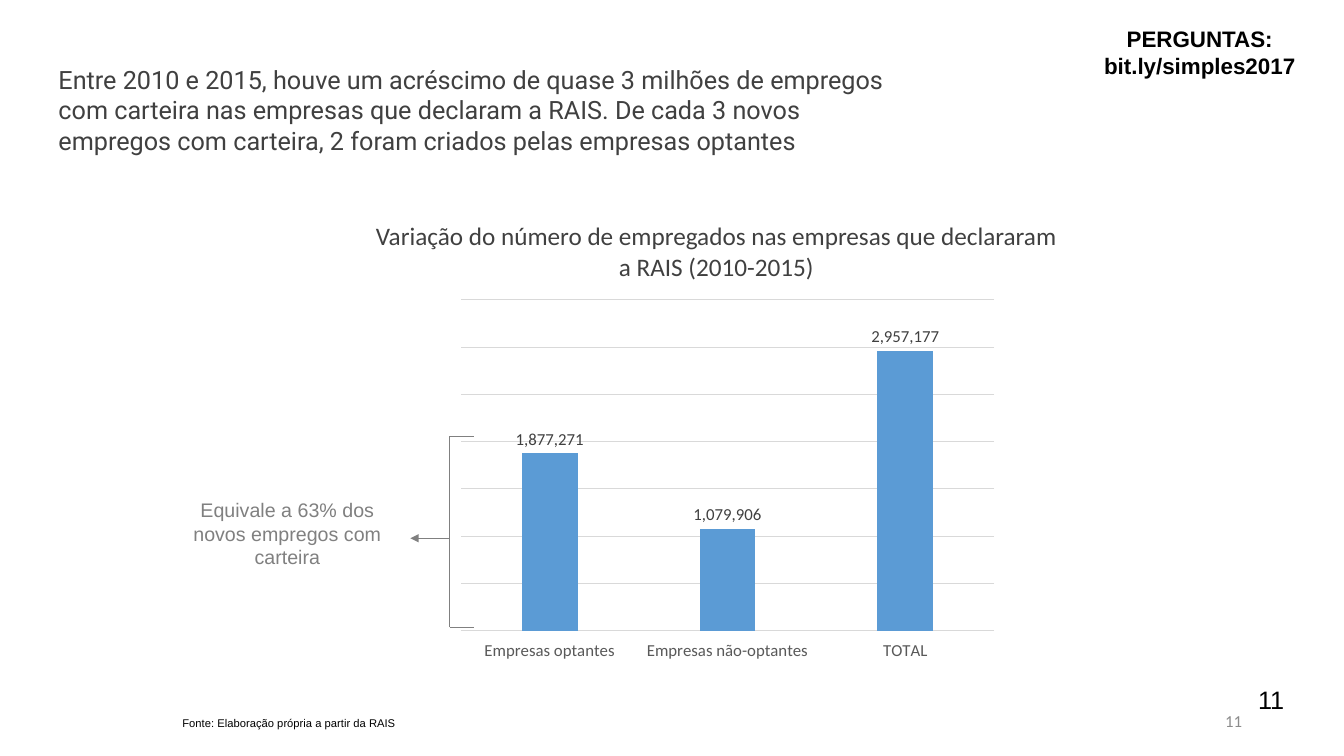
from dataclasses import dataclass

from lxml.etree import SubElement
from pptx import Presentation
from pptx.chart.data import CategoryChartData
from pptx.dml.color import RGBColor
from pptx.enum.chart import XL_CHART_TYPE as ChartType
from pptx.enum.chart import XL_LABEL_POSITION as LabelPosition
from pptx.enum.chart import XL_TICK_LABEL_POSITION as TickLabels
from pptx.enum.chart import XL_TICK_MARK as TickMark
from pptx.enum.shapes import MSO_CONNECTOR as Connector
from pptx.enum.shapes import MSO_SHAPE as Preset
from pptx.enum.text import MSO_ANCHOR as Anchor
from pptx.enum.text import MSO_AUTO_SIZE as AutoSize
from pptx.enum.text import PP_ALIGN as Align
from pptx.oxml.ns import qn
from pptx.util import Inches, Pt


@dataclass(frozen=True)
class Theme:
    black: str = "000000"
    dark: str = "404040"
    label: str = "595959"
    gray: str = "808080"
    pale: str = "8C8C8C"
    grid: str = "D9D9D9"
    bar: str = "5B9BD5"
    white: str = "FFFFFF"
    heading: int = 18
    banner: int = 16
    note: int = 14
    small: int = 12
    source: int = 8
    sans: str = "Arial"
    chart: str = "Calibri"
    title: str = "Roboto"


class SlideBuilder:
    """Draws styled elements on one slide, with lengths in percent of its size."""

    def __init__(self, deck, theme):
        self.deck, self.theme = deck, theme
        self.page = deck.slides.add_slide(deck.slide_layouts[5])

    def across(self, share):
        return int(self.deck.slide_width * share / 100)

    def down(self, share):
        return int(self.deck.slide_height * share / 100)

    def area(self, left, top, width, height):
        return self.across(left), self.down(top), self.across(width), self.down(height)

    def style(self, font, size, color, face, bold=False):
        font.size, font.name, font.bold = Pt(size), face, bold
        font.color.rgb = RGBColor.from_string(color)

    def fill_text(self, box, text, size, color, face, align=Align.LEFT, anchor=Anchor.TOP, bold=False):
        frame = box.text_frame
        frame.text = text
        frame.word_wrap = True
        frame.auto_size = AutoSize.NONE
        frame.vertical_anchor = anchor
        for para in frame.paragraphs:
            para.alignment = align
            for span in para.runs:
                self.style(span.font, size, color, face, bold)

    def title(self, area, text):
        box = self.page.shapes.title
        box.left, box.top, box.width, box.height = self.area(*area)
        self.fill_text(box, text, self.theme.heading, self.theme.dark, self.theme.title)

    def text(self, area, text, size, color, face, **layout):
        box = self.page.shapes.add_textbox(*self.area(*area))
        self.fill_text(box, text, size, color, face, **layout)

    def banner(self, area, text):
        box = self.page.shapes.add_shape(Preset.RECTANGLE, *self.area(*area))
        box.shadow.inherit = False
        box.fill.solid()
        box.fill.fore_color.rgb = RGBColor.from_string(self.theme.white)
        box.line.fill.background()
        self.fill_text(box, text, self.theme.banner, self.theme.black, self.theme.sans,
                       align=Align.CENTER, bold=True)

    def line(self, group, start, end, arrow=False):
        ends = [self.across(start[0]), self.down(start[1]), self.across(end[0]), self.down(end[1])]
        connector = group.shapes.add_connector(Connector.STRAIGHT, *ends)
        connector.line.color.rgb = RGBColor.from_string(self.theme.gray)
        connector.line.width = Pt(0.5)
        properties = connector.element.spPr
        if arrow:
            SubElement(properties.find(qn("a:ln")), qn("a:tailEnd"), type="triangle")
        SubElement(properties, qn("a:effectLst"))

    def bracket(self, tip, spine, mouth, top, middle, bottom):
        group = self.page.shapes.add_group_shape()
        self.line(group, (spine, bottom), (mouth, bottom))
        self.line(group, (spine, top), (spine, bottom))
        self.line(group, (spine, top), (mouth, top))
        self.line(group, (spine, middle), (tip, middle), arrow=True)

    def columns(self, area, values, top, step):
        theme = self.theme
        data = CategoryChartData(number_format="#,##0")
        data.categories = list(values)
        data.add_series("Series 1", list(values.values()))
        frame = self.page.shapes.add_chart(ChartType.COLUMN_CLUSTERED, *self.area(*area), data)
        chart = frame.chart
        chart.has_legend = chart.has_title = False
        self.style(chart.font, theme.small, theme.black, theme.chart)

        axis = chart.category_axis
        axis.major_tick_mark = axis.minor_tick_mark = TickMark.NONE
        axis.tick_label_position = TickLabels.LOW
        self.style(axis.tick_labels.font, theme.small, theme.label, theme.chart)

        scale = chart.value_axis
        scale.visible = False
        scale.minimum_scale, scale.maximum_scale, scale.major_unit = 0, top, step
        for rule in (axis.format.line, scale.major_gridlines.format.line):
            rule.color.rgb = RGBColor.from_string(theme.grid)
            rule.width = Pt(0.75)

        plot = chart.plots[0]
        plot.gap_width, plot.overlap, plot.vary_by_categories = 219, -27, False
        fill = plot.series[0].format.fill
        fill.solid()
        fill.fore_color.rgb = RGBColor.from_string(theme.bar)
        labels = plot.series[0].data_labels
        labels.show_value = True
        labels.position = LabelPosition.OUTSIDE_END
        labels.number_format, labels.number_format_is_linked = "#,##0", False
        self.style(labels.font, theme.small, theme.dark, theme.chart)


def main():
    deck = Presentation()
    deck.slide_width, deck.slide_height = Inches(13.33), Inches(7.5)
    theme = Theme()
    slide = SlideBuilder(deck, theme)

    slide.title((3.6, 7.87, 64.07, 13.47),
                "Entre 2010 e 2015, houve um acréscimo de quase 3 milhões de empregos com carteira "
                "nas empresas que declaram a RAIS. De cada 3 novos empregos com carteira, "
                "2 foram criados pelas empresas optantes")
    slide.text((27, 28.53, 52.6, 9.47),
               "Variação do número de empregados nas empresas que declararam a RAIS (2010-2015)",
               theme.heading, theme.dark, theme.chart, align=Align.CENTER)
    slide.bracket(tip=30.53, spine=33.46, mouth=35.26, top=57.73, middle=71.2, bottom=82.93)
    slide.text((12.53, 65.2, 17.7, 10.8), "Equivale a 63% dos novos empregos com carteira",
               theme.note, theme.gray, theme.sans, align=Align.CENTER)
    slide.text((12.83, 94.13, 20.7, 3.2), "Fonte: Elaboração própria a partir da RAIS",
               theme.source, theme.black, theme.sans)
    slide.columns((33.46, 38.67, 41.34, 49.73),
                  {"Empresas optantes": 1877271, "Empresas não-optantes": 1079906, "TOTAL": 2957177},
                  top=3500000, step=500000)
    slide.banner((80.12, 2.67, 18.3, 8.53), "PERGUNTAS:\nbit.ly/simples2017")
    slide.text((92.87, 89.87, 7.13, 5.33), "11", theme.heading, theme.black, theme.sans)
    slide.text((70.67, 92.67, 22.5, 5.33), "11", theme.small, theme.pale, theme.chart,
               align=Align.RIGHT, anchor=Anchor.MIDDLE)
    deck.save("out.pptx")


if __name__ == "__main__":
    main()
